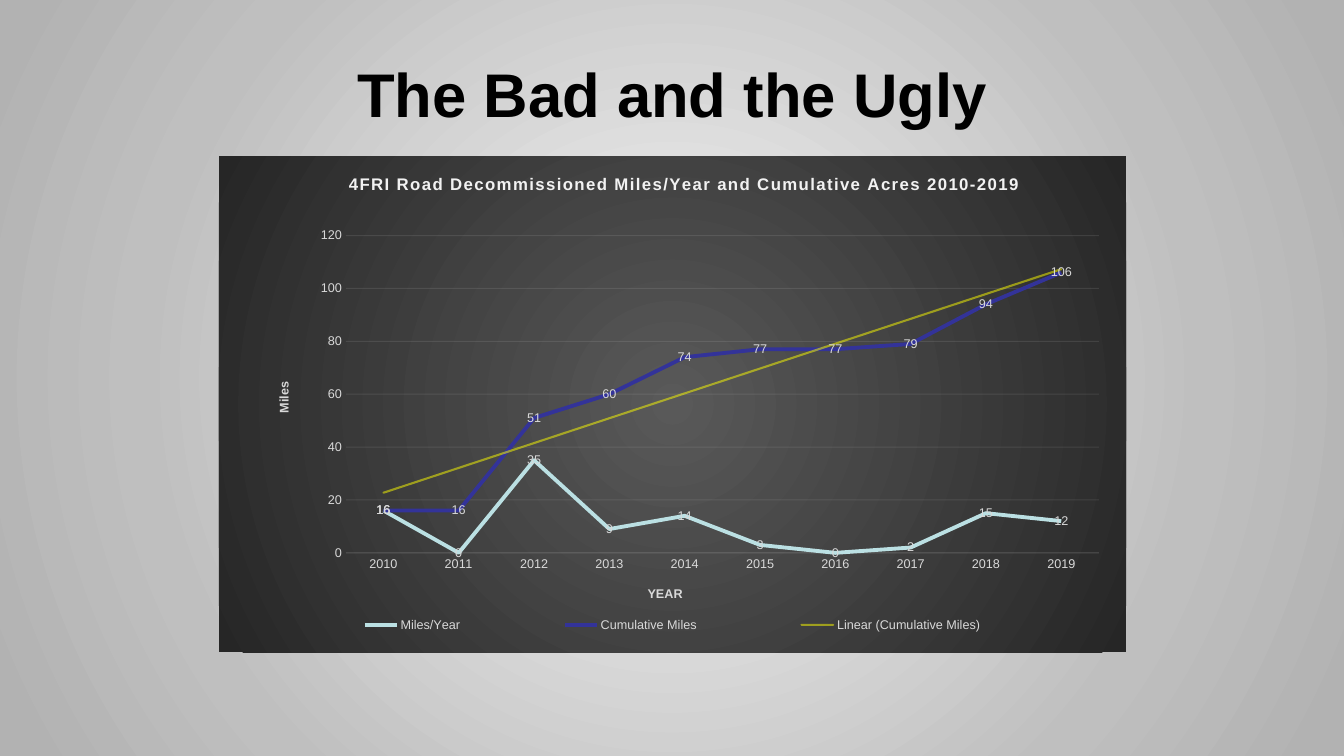
from dataclasses import dataclass

from lxml import etree
from pptx import Presentation
from pptx.chart.data import CategoryChartData
from pptx.dml.color import RGBColor
from pptx.enum.chart import (
    XL_CHART_TYPE,
    XL_LABEL_POSITION,
    XL_LEGEND_POSITION,
    XL_MARKER_STYLE,
    XL_TICK_MARK,
)
from pptx.enum.text import MSO_ANCHOR, PP_ALIGN
from pptx.oxml import parse_xml
from pptx.oxml.ns import nsdecls, qn
from pptx.util import Inches, Pt

LINE = XL_CHART_TYPE.LINE
MIDDLE = XL_LABEL_POSITION.CENTER
BOTTOM = XL_LEGEND_POSITION.BOTTOM
NO_MARK = XL_MARKER_STYLE.NONE
NO_TICK = XL_TICK_MARK.NONE
ANCHOR = MSO_ANCHOR.MIDDLE
CENTER = PP_ALIGN.CENTER

FONT = "Arial"
FORMAT = "#,##0"
COLORS = {
    "black": "000000",
    "white": "FFFFFF",
    "pale": "F2F2F2",
    "gray": "D9D9D9",
    "aqua": "BBE0E3",
    "navy": "333399",
    "yellow": "FFFF00",
}
PAGE = [(0, "E3E3E3"), (23, "E3E3E3"), (69, "BFBFBF"), (97, "B2B2B2")]
PANEL = [(0, "595959"), (100, "262626")]


@dataclass
class Series:
    name: str
    values: list[int | None]
    color: str
    trend: str | None = None


SERIES = [
    Series("Miles/Year", [16, 0, 35, 9, 14, 3, 0, 2, 15, 12], "aqua"),
    Series("Cumulative Miles", [16, 16, 51, 60, 74, 77, 77, 79, 94, 106], "navy", "yellow"),
    Series("Series 3", [16] + [None] * 9, "white"),
]


def set_font(font, size: float, color: str, bold: bool = False) -> None:
    font.name = FONT
    font.size = Pt(size)
    font.bold = bold
    font.color.rgb = RGBColor.from_string(COLORS[color])


def radial(stops: list[tuple[int, str]]) -> str:
    marks = "".join(
        f'<a:gs pos="{pos * 1000}"><a:srgbClr val="{color}"/></a:gs>' for pos, color in stops
    )
    return (
        f'<a:gradFill rotWithShape="1"><a:gsLst>{marks}</a:gsLst><a:path path="circle">'
        '<a:fillToRect l="50000" t="50000" r="50000" b="50000"/></a:path></a:gradFill>'
    )


def set_line(line, color: str, width: float, alpha: int = 100) -> None:
    line.color.rgb = RGBColor.from_string(COLORS[color])
    line.width = Pt(width)
    if alpha < 100:
        tint = next(line._get_or_add_ln().iter(qn("a:srgbClr")))
        etree.SubElement(tint, qn("a:alpha")).set("val", str(alpha * 1000))


def layout(x: float, y: float, w: float = 0, h: float = 0, inner: bool = False):
    target = '<c:layoutTarget val="inner"/>' if inner else ""
    size = f'<c:w val="{w}"/><c:h val="{h}"/>' if w else ""
    return parse_xml(
        f'<c:layout {nsdecls("c")}><c:manualLayout>{target}<c:xMode val="edge"/>'
        f'<c:yMode val="edge"/><c:x val="{x}"/><c:y val="{y}"/>{size}</c:manualLayout></c:layout>'
    )


def drop_layout(node) -> None:
    for old in node.findall(qn("c:layout")):
        node.remove(old)


def set_title(title, text: str, size: float, color: str, x: float, y: float) -> None:
    title.text_frame.text = text
    part = title.text_frame.paragraphs[0]
    set_font(part.font, size, color, True)
    node = title._element
    drop_layout(node)
    node.find(qn("c:tx")).addnext(layout(x, y))


def set_axis(axis, text: str, x: float, y: float) -> None:
    axis.major_tick_mark = NO_TICK
    axis.minor_tick_mark = NO_TICK
    set_font(axis.tick_labels.font, 9, "gray")
    set_title(axis.axis_title, text, 9, "gray", x, y)


def add_trend(series, color: str) -> None:
    trend = parse_xml(
        f'<c:trendline {nsdecls("c", "a")}><c:spPr><a:ln w="{Pt(1.5)}" cap="rnd"><a:solidFill>'
        f'<a:srgbClr val="{COLORS[color]}"><a:alpha val="50000"/></a:srgbClr></a:solidFill></a:ln>'
        '</c:spPr><c:trendlineType val="linear"/><c:dispRSqr val="0"/><c:dispEq val="0"/></c:trendline>'
    )
    series._element.find(qn("c:cat")).addprevious(trend)


def style_series(series, item: Series) -> None:
    series.smooth = False
    series.marker.style = NO_MARK
    set_line(series.format.line, item.color, 2.75)
    labels = series.data_labels
    labels.show_value = True
    labels.position = MIDDLE
    labels.number_format = FORMAT
    labels.number_format_is_linked = False
    set_font(labels.font, 9, "gray")
    if item.trend:
        add_trend(series, item.trend)


def add_legend(chart) -> None:
    chart.has_legend = True
    legend = chart.legend
    legend.position = BOTTOM
    legend.include_in_layout = False
    set_font(legend.font, 9, "gray")
    node = legend._element
    drop_layout(node)
    entry = parse_xml(
        f'<c:legendEntry {nsdecls("c")}><c:idx val="2"/><c:delete val="1"/></c:legendEntry>'
    )
    node.find(qn("c:legendPos")).addnext(entry)
    entry.addnext(layout(0.05, 0.91, 0.9, 0.07))


def add_chart(slide) -> None:
    data = CategoryChartData(number_format=FORMAT)
    data.categories = [str(year) for year in range(2010, 2020)]
    for item in SERIES:
        data.add_series(item.name, item.values)
    chart = slide.shapes.add_chart(
        LINE, Inches(2.17), Inches(1.55), Inches(9), Inches(4.92), data
    ).chart
    set_font(chart.font, 10, "black")
    root = chart._chartSpace
    root.find(qn("c:chart")).addnext(
        parse_xml(f'<c:spPr {nsdecls("c", "a")}>{radial(PANEL)}<a:ln><a:noFill/></a:ln></c:spPr>')
    )

    chart.has_title = True
    head = chart.chart_title
    set_title(
        head, "4FRI Road Decommissioned Miles/Year and Cumulative Acres 2010-2019",
        12, "pale", 0.14, 0.03,
    )
    for mark in head._element.iter(qn("a:defRPr")):
        mark.set("spc", "100")

    years, miles = chart.category_axis, chart.value_axis
    set_axis(years, "YEAR", 0.47, 0.86)
    set_line(years.format.line, "pale", 0.75, 10)
    set_axis(miles, "Miles", 0.06, 0.45)
    miles.minimum_scale, miles.maximum_scale, miles.major_unit = 0, 120, 20
    miles.tick_labels.number_format = FORMAT
    miles.tick_labels.number_format_is_linked = False
    miles.format.line.fill.background()
    set_line(miles.major_gridlines.format.line, "pale", 0.75, 10)

    plot = chart.plots[0]
    plot.vary_by_categories = False
    for series, item in zip(plot.series, SERIES):
        style_series(series, item)
    area = root.find(".//" + qn("c:plotArea"))
    drop_layout(area)
    area.insert(0, layout(0.14, 0.16, 0.83, 0.64, True))
    add_legend(chart)


def add_head(slide) -> None:
    frame = slide.shapes.add_textbox(
        Inches(0.67), Inches(0.3), Inches(12), Inches(1.25)
    ).text_frame
    frame.word_wrap = True
    frame.vertical_anchor = ANCHOR
    line = frame.paragraphs[0]
    line.text = "The Bad and the Ugly"
    line.alignment = CENTER
    set_font(line.font, 44, "black", True)


def main() -> None:
    deck = Presentation()
    deck.slide_width, deck.slide_height = Inches(13.33), Inches(7.5)
    slide = deck.slides.add_slide(deck.slide_layouts[6])
    slide._element.cSld.insert(
        0, parse_xml(f'<p:bg {nsdecls("p", "a")}><p:bgPr>{radial(PAGE)}<a:effectLst/></p:bgPr></p:bg>')
    )
    add_head(slide)
    add_chart(slide)
    deck.save("out.pptx")


if __name__ == "__main__":
    main()
